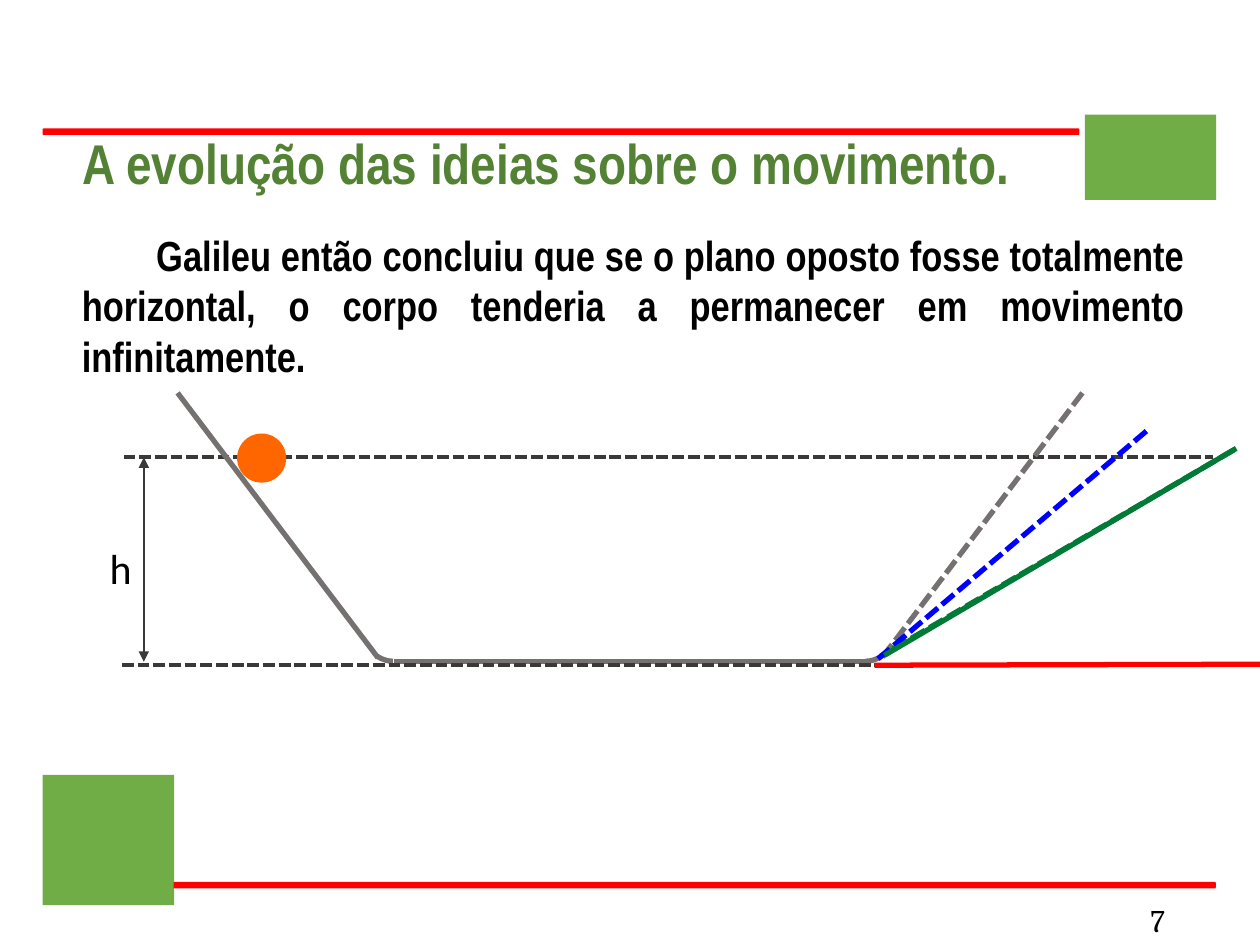
import pptx
import pptx.dml.color
import pptx.enum.dml
import pptx.enum.shapes
import pptx.enum.text
import pptx.oxml.ns
import pptx.util
from lxml import etree

Cm = pptx.util.Cm
SHAPE = pptx.enum.shapes.MSO_SHAPE
ALIGN = pptx.enum.text.PP_ALIGN

RED = "FF0000"
LIGHT_GREEN = "70AD47"
TITLE_GREEN = "548235"
RAMP_GREEN = "007A37"
BLUE = "0000FF"
ORANGE = "FF6600"
GRAY = "767171"
DARK = "3B3838"
BLACK = "000000"


def rgb(color):
    return pptx.dml.color.RGBColor.from_string(color)


def add_solid(s, kind, x, y, w, h, color):
    sp = s.shapes.add_shape(kind, Cm(x), Cm(y), Cm(w), Cm(h))
    sp.shadow.inherit = False
    sp.fill.solid()
    sp.fill.fore_color.rgb = rgb(color)
    sp.line.fill.background()
    return sp


def add_line(s, start, end, color, width=3, dashed=False, arrows=False):
    x1, y1 = start
    x2, y2 = end
    cxn = s.shapes.add_connector(pptx.enum.shapes.MSO_CONNECTOR.STRAIGHT,
                                 Cm(x1), Cm(y1), Cm(x2), Cm(y2))
    cxn.line.color.rgb = rgb(color)
    cxn.line.width = pptx.util.Pt(width)
    if dashed:
        cxn.line.dash_style = pptx.enum.dml.MSO_LINE.SQUARE_DOT
    if arrows:
        ln = cxn.line._get_or_add_ln()
        for end_tag in ("a:headEnd", "a:tailEnd"):
            etree.SubElement(ln, pptx.oxml.ns.qn(end_tag), type="triangle")
    etree.SubElement(cxn._element.spPr, pptx.oxml.ns.qn("a:effectLst"))


def add_bend(s, x, y, angles):
    """Draw the short arc that joins a ramp to the floor."""
    sp = s.shapes.add_shape(SHAPE.ARC, Cm(x), Cm(y), Cm(1.19), Cm(1.19))
    sp.shadow.inherit = False
    sp.rotation = 180
    sp.adjustments[0], sp.adjustments[1] = angles
    sp.fill.background()
    sp.line.color.rgb = rgb(GRAY)
    sp.line.width = pptx.util.Pt(3)


def set_text(sp, text, font, size, color=BLACK, bold=False,
             align=ALIGN.LEFT, wrap=True):
    tf = sp.text_frame
    tf.text = text
    tf.word_wrap = wrap
    tf.auto_size = pptx.enum.text.MSO_AUTO_SIZE.NONE
    tf.vertical_anchor = pptx.enum.text.MSO_ANCHOR.TOP
    p = tf.paragraphs[0]
    p.alignment = align
    r = p.runs[0]
    r.font.name = font
    r.font.size = pptx.util.Pt(size)
    r.font.bold = bold
    r.font.color.rgb = rgb(color)
    return p


def add_text(s, x, y, w, h, text, font, size, **style):
    sp = s.shapes.add_textbox(Cm(x), Cm(y), Cm(w), Cm(h))
    return set_text(sp, text, font, size, **style)


def add_title(s, text):
    sp = s.shapes.title
    sp.left, sp.top, sp.width, sp.height = Cm(1.4), Cm(2.46), Cm(19.51), Cm(1.63)
    set_text(sp, text, "Arial Narrow", 32, color=TITLE_GREEN, bold=True)


def add_decoration(s):
    add_solid(s, SHAPE.ROUNDED_RECTANGLE, 0.86, 2.59, 20.9, 0.13, RED)
    add_solid(s, SHAPE.RECTANGLE, 0.86, 15.62, 2.65, 2.63, LIGHT_GREEN)
    add_solid(s, SHAPE.RECTANGLE, 21.87, 2.31, 2.65, 1.72, LIGHT_GREEN)
    add_solid(s, SHAPE.ROUNDED_RECTANGLE, 3.5, 17.78, 21.01, 0.13, RED)


def add_ramps(s):
    top, floor = 9.22, 13.34
    add_line(s, (2.49, top), (24.46, top), DARK, 2.25, dashed=True)

    add_line(s, (3.58, 7.92), (7.62, 13.26), GRAY)
    add_line(s, (7.95, floor), (17.53, floor), GRAY)
    add_bend(s, 7.34, 12.14, (162.83, 182.69))
    add_bend(s, 16.84, 12.14, (141.31, 161.17))
    add_line(s, (21.82, 7.92), (17.78, 13.26), GRAY, dashed=True)
    add_solid(s, SHAPE.OVAL, 4.78, 8.74, 0.99, 0.99, ORANGE)

    add_line(s, (2.46, 13.41), (22.07, 13.41), DARK, 2.25, dashed=True)
    add_line(s, (2.9, top), (2.9, floor), DARK, 1.5, arrows=True)
    add_text(s, 1.96, 10.82, 0.99, 1.27, "h", "Calibri", 24, wrap=False)

    add_line(s, (24.87, 9.07), (17.75, 13.23), RAMP_GREEN, dashed=True)
    add_line(s, (23.11, 8.69), (17.7, 13.28), BLUE, dashed=True)
    add_line(s, (24.92, 9.04), (17.83, 13.21), RAMP_GREEN)
    add_line(s, (25.4, 13.39), (17.63, 13.41), RED)


def main():
    prs = pptx.Presentation()
    prs.slide_width, prs.slide_height = Cm(25.4), Cm(19.05)
    s = prs.slides.add_slide(prs.slide_layouts[5])

    add_decoration(s)
    add_title(s, "A evolução das ideias sobre o movimento.")
    add_ramps(s)
    p = add_text(s, 1.4, 4.5, 22.73, 3.33,
                 "Galileu então concluiu que se o plano oposto fosse totalmente "
                 "horizontal, o corpo tenderia a permanecer em movimento "
                 "infinitamente.",
                 "Arial Narrow", 24, bold=True, align=ALIGN.JUSTIFY)
    p._p.get_or_add_pPr().set("indent", str(Cm(1.5)))
    add_text(s, 22.94, 18.03, 1.55, 1.02, "7", "Cambria", 18)

    prs.save("out.pptx")


if __name__ == "__main__":
    main()
